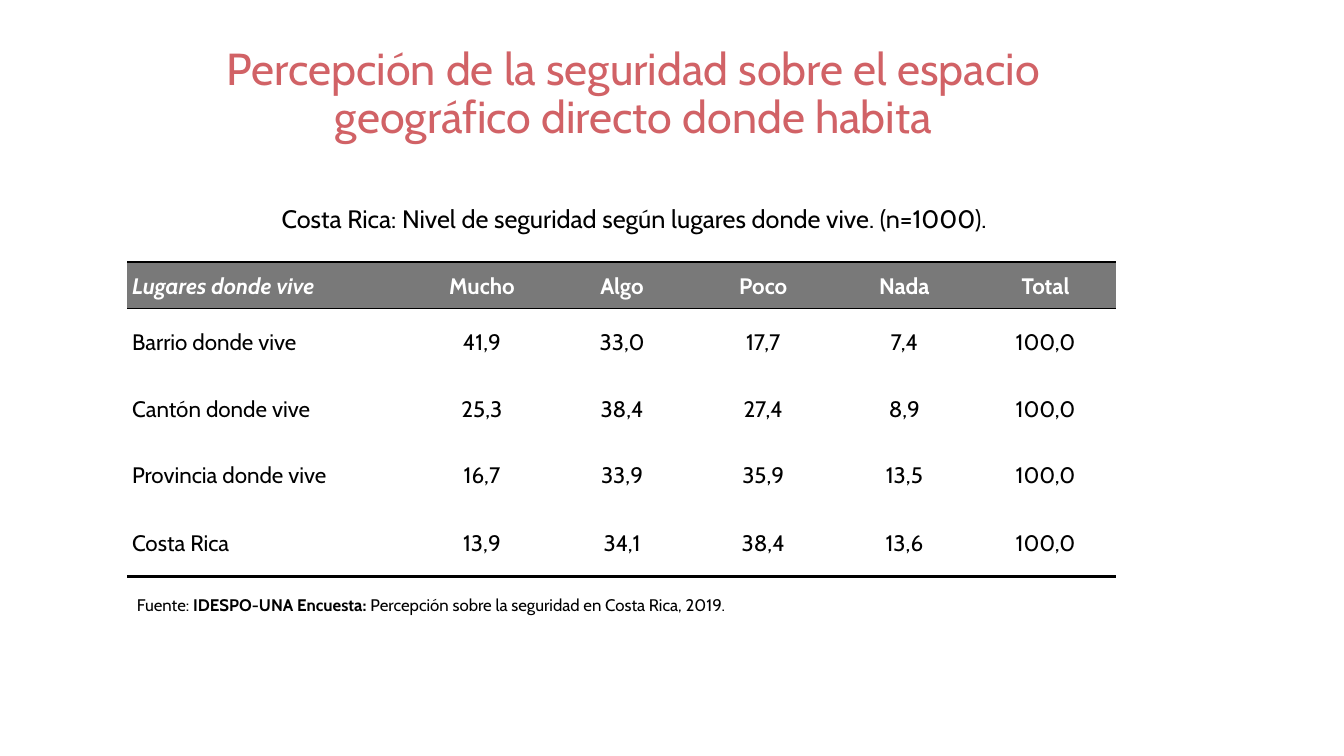
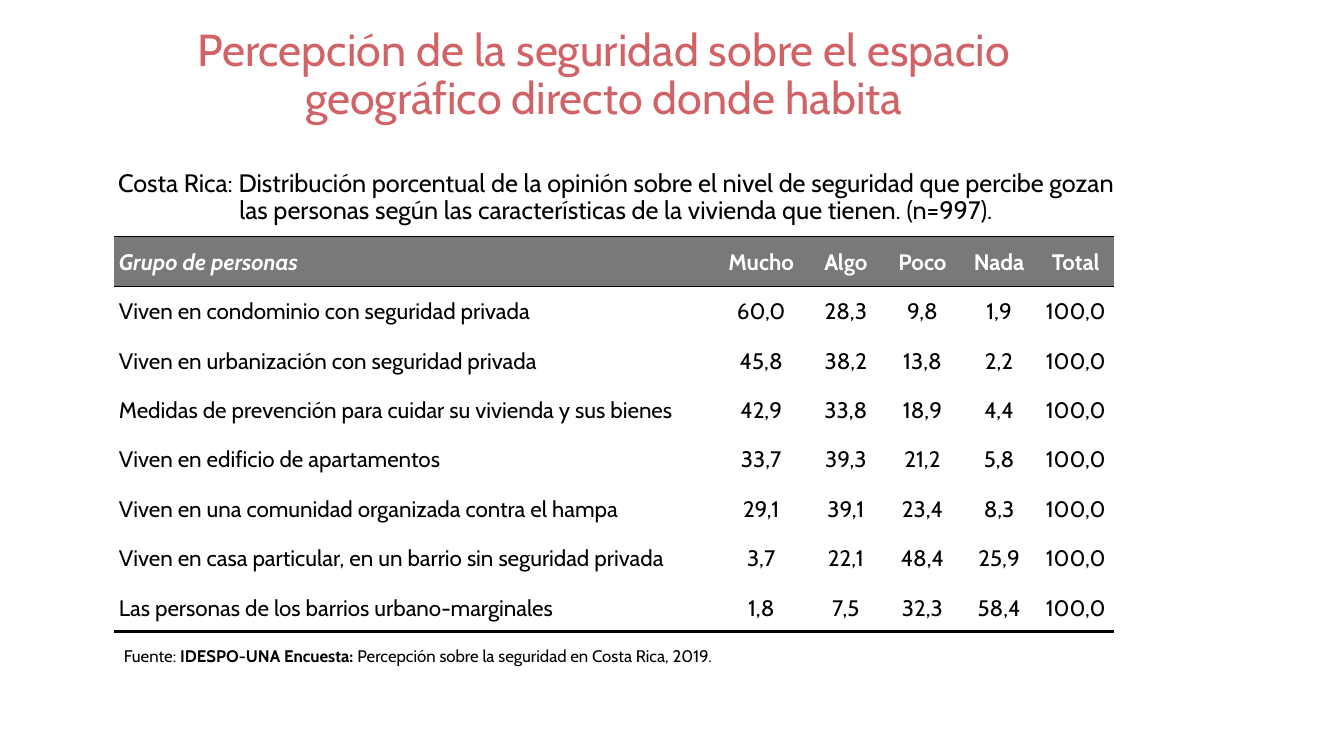
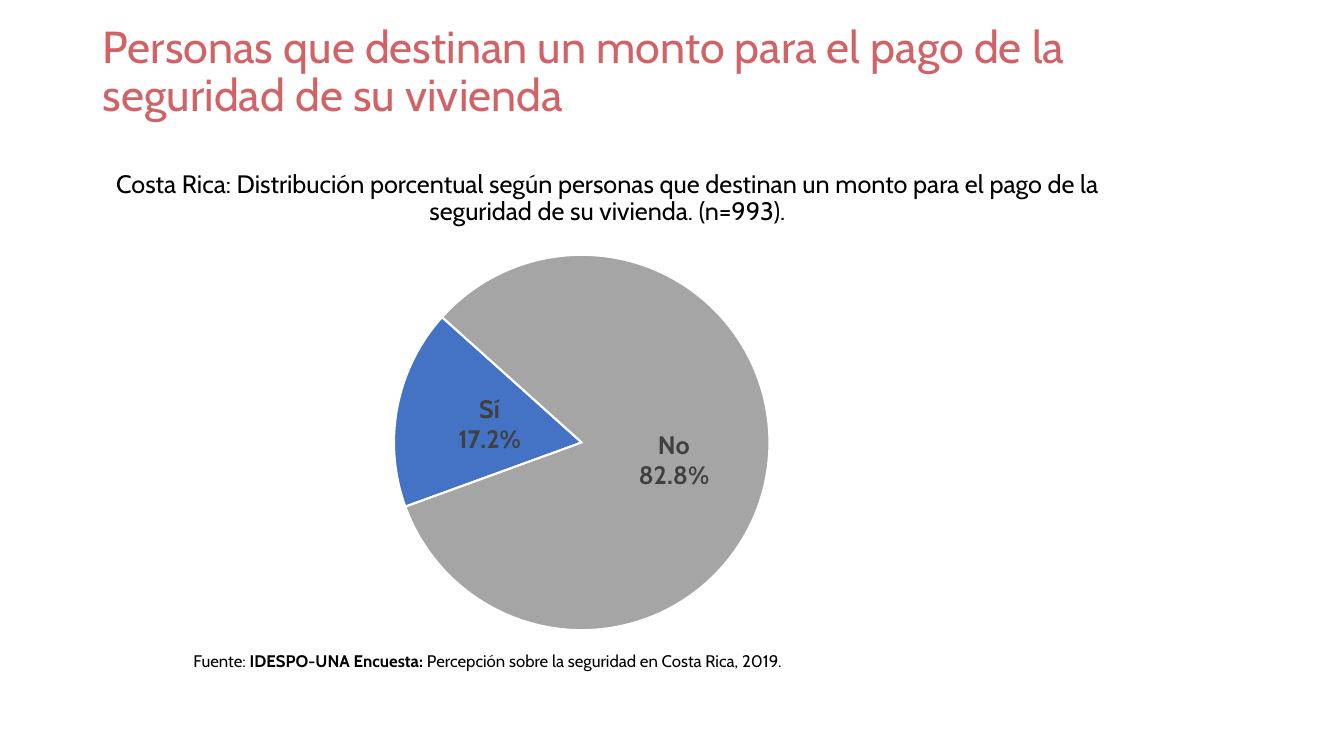
from lxml import etree
from pptx import Presentation
from pptx.chart.data import CategoryChartData
from pptx.dml.color import RGBColor
from pptx.enum.chart import XL_CHART_TYPE, XL_LABEL_POSITION
from pptx.enum.text import MSO_ANCHOR, MSO_AUTO_SIZE, PP_ALIGN
from pptx.oxml.ns import qn
from pptx.util import Inches, Pt

LEFT, CENTER = PP_ALIGN.LEFT, PP_ALIGN.CENTER
TOP, MIDDLE = MSO_ANCHOR.TOP, MSO_ANCHOR.MIDDLE
FIXED, GROW = MSO_AUTO_SIZE.NONE, MSO_AUTO_SIZE.SHAPE_TO_FIT_TEXT
PIE = XL_CHART_TYPE.PIE
MID = XL_LABEL_POSITION.CENTER
PLAIN = "{2D5ABB26-0587-4C30-8999-92F81FD0307C}"

FONT = "Cabin"
ROSE, BLACK, WHITE = "D16266", "000000", "FFFFFF"
BAND, DARK, BLUE, GRAY = "797979", "404040", "4472C4", "A5A5A5"

SPACE = "Percepción de la seguridad sobre el espacio geográfico directo donde habita"
LEVELS = ["Mucho", "Algo", "Poco", "Nada", "Total"]
SOURCE = [
    ("Fuente: ", False),
    ("IDESPO-UNA Encuesta: ", True),
    ("Percepción sobre la seguridad en Costa Rica, 2019.", False),
]
PLACES = [
    ["Lugares donde vive", *LEVELS],
    ["Barrio donde vive", "41,9", "33,0", "17,7", "7,4", "100,0"],
    ["Cantón donde vive", "25,3", "38,4", "27,4", "8,9", "100,0"],
    ["Provincia donde vive", "16,7", "33,9", "35,9", "13,5", "100,0"],
    ["Costa Rica", "13,9", "34,1", "38,4", "13,6", "100,0"],
]
HOMES = [
    ["Grupo de personas", *LEVELS],
    ["Viven en condominio con seguridad privada", "60,0", "28,3", "9,8", "1,9", "100,0"],
    ["Viven en urbanización con seguridad privada", "45,8", "38,2", "13,8", "2,2", "100,0"],
    ["Medidas de prevención para cuidar su vivienda y sus bienes", "42,9", "33,8", "18,9", "4,4", "100,0"],
    ["Viven en edificio de apartamentos", "33,7", "39,3", "21,2", "5,8", "100,0"],
    ["Viven en una comunidad organizada contra el hampa", "29,1", "39,1", "23,4", "8,3", "100,0"],
    ["Viven en casa particular, en un barrio sin seguridad privada", "3,7", "22,1", "48,4", "25,9", "100,0"],
    ["Las personas de los barrios urbano-marginales", "1,8", "7,5", "32,3", "58,4", "100,0"],
]


def color(code):
    return RGBColor.from_string(code)


def style(font, size, shade=BLACK, bold=False, italic=False):
    font.name, font.size = FONT, Pt(size)
    font.bold, font.italic = bold, italic
    font.color.rgb = color(shade)


def write(frame, text, size=18, shade=BLACK, bold=False, italic=False,
          align=LEFT, lead=1.0, after=0):
    line = frame.paragraphs[0]
    line.alignment, line.line_spacing = align, lead
    line.space_before, line.space_after = Pt(0), Pt(after)
    for part, heavy in [(text, bold)] if isinstance(text, str) else text:
        run = line.add_run()
        run.text = part
        style(run.font, size, shade, heavy, italic)
    return line


def rule(cell, side, width):
    edge = etree.SubElement(cell._tc.get_or_add_tcPr(), qn("a:" + side), w=str(Pt(width)))
    fill = etree.SubElement(edge, qn("a:solidFill"))
    etree.SubElement(fill, qn("a:srgbClr"), val=BLACK)


class Deck:
    def __init__(self):
        self.file = Presentation()
        self.file.slide_width, self.file.slide_height = Inches(13.33), Inches(7.5)
        self.slide = None

    def place(self, shape, box, anchor):
        shape.left, shape.top, shape.width, shape.height = map(Inches, box)
        frame = shape.text_frame
        frame.word_wrap, frame.auto_size = True, FIXED
        frame.vertical_anchor = anchor
        return frame

    def title(self, text, box, align=CENTER):
        self.slide = self.file.slides.add_slide(self.file.slide_layouts[1])
        frame = self.place(self.slide.shapes.title, box, MIDDLE)
        write(frame, text, size=32, shade=ROSE, align=align, lead=0.9)

    def lead(self, text, box):
        frame = self.place(self.slide.placeholders[1], box, TOP)
        line = write(frame, text, align=CENTER, lead=0.9)
        props = line._p.get_or_add_pPr()
        props.set("marL", "0")
        props.set("indent", "0")
        etree.SubElement(props, qn("a:buNone"))

    def table(self, rows, left, top, widths, heights):
        box = map(Inches, (left, top, sum(widths), sum(heights)))
        grid = self.slide.shapes.add_table(len(rows), len(widths), *box).table
        grid._tbl.tblPr.find(qn("a:tableStyleId")).text = PLAIN
        grid.horz_banding = False
        for col, width in zip(grid.columns, widths):
            col.width = Inches(width)
        for row, height in zip(grid.rows, heights):
            row.height = Inches(height)
        for r, row in enumerate(rows):
            for c, text in enumerate(row):
                self.cell(grid.cell(r, c), text, r == 0, c == 0, r == len(rows) - 1)

    def cell(self, cell, text, head, first, last):
        cell.vertical_anchor = MIDDLE
        cell.margin_left = cell.margin_right = Inches(0.05)
        cell.margin_top = cell.margin_bottom = 0
        if head:
            rule(cell, "lnT", 1)
            rule(cell, "lnB", 1)
            cell.fill.solid()
            cell.fill.fore_color.rgb = color(BAND)
        else:
            if last:
                rule(cell, "lnB", 2.25)
            cell.fill.background()
        write(cell.text_frame, text, size=16, shade=WHITE if head else BLACK,
              bold=head, italic=head and first,
              align=LEFT if first else CENTER, lead=1.07, after=8)

    def pie(self, parts, shades, start, box):
        data = CategoryChartData()
        data.categories = list(parts)
        data.add_series("Series 1", list(parts.values()))
        chart = self.slide.shapes.add_chart(PIE, *map(Inches, box), data).chart
        chart.has_title = chart.has_legend = False
        style(chart.font, 10)
        plot = chart.plots[0]
        plot.vary_by_categories = True
        for i, shade in enumerate(shades):
            form = plot.series[0].points[i].format
            form.fill.solid()
            form.fill.fore_color.rgb = color(shade)
            form.line.color.rgb = color(WHITE)
            form.line.width = Pt(1.5)
        plot.has_data_labels = True
        tags = plot.data_labels
        style(tags.font, 18, DARK, bold=True)
        tags.number_format, tags.number_format_is_linked = "0.0%", False
        tags.position = MID
        tags.show_value = False
        tags.show_percentage = tags.show_category_name = True
        pie = chart._chartSpace.find(".//" + qn("c:pieChart"))
        for old in pie.findall(qn("c:firstSliceAng")):
            pie.remove(old)
        etree.SubElement(pie, qn("c:firstSliceAng"), val=str(start))

    def source(self, left, top):
        box = self.slide.shapes.add_textbox(*map(Inches, (left, top, 6.42, 0.3)))
        frame = box.text_frame
        frame.word_wrap, frame.auto_size = True, GROW
        write(frame, SOURCE, size=12)


def main():
    deck = Deck()

    deck.title(SPACE, (1.13, 0.22, 10.31, 1.45))
    deck.lead("Costa Rica: Nivel de seguridad según lugares donde vive. (n=1000).",
              (0.92, 2, 10.74, 4.76))
    deck.table(PLACES, 1.26, 2.6, [2.83, 1.38] + [1.4] * 4, [0.46] + [0.66] * 3 + [0.68])
    deck.source(1.26, 5.85)

    deck.title(SPACE, (0.92, 0.03, 10.14, 1.45))
    deck.lead("Costa Rica: Distribución porcentual de la opinión sobre el nivel de seguridad "
              "que percibe gozan las personas según las características de la vivienda "
              "que tienen. (n=997).", (0.92, 1.64, 10.38, 4.76))
    deck.table(HOMES, 1.13, 2.35, [5.96, 0.92] + [0.76] * 4, [0.49] * 8)
    deck.source(1.13, 6.36)

    deck.title("Personas que destinan un monto para el pago de la seguridad de su vivienda",
               (0.92, 0, 11.07, 1.45), align=LEFT)
    deck.lead("Costa Rica: Distribución porcentual según personas que destinan un monto "
              "para el pago de la seguridad de su vivienda. (n=993).",
              (1.02, 1.65, 10.01, 4.76))
    deck.pie({"Sí": 17.2, "No": 82.8}, [BLUE, GRAY], 250, (1.89, 2.39, 7.76, 4))
    deck.source(1.82, 6.41)

    deck.file.save("out.pptx")


if __name__ == "__main__":
    main()
